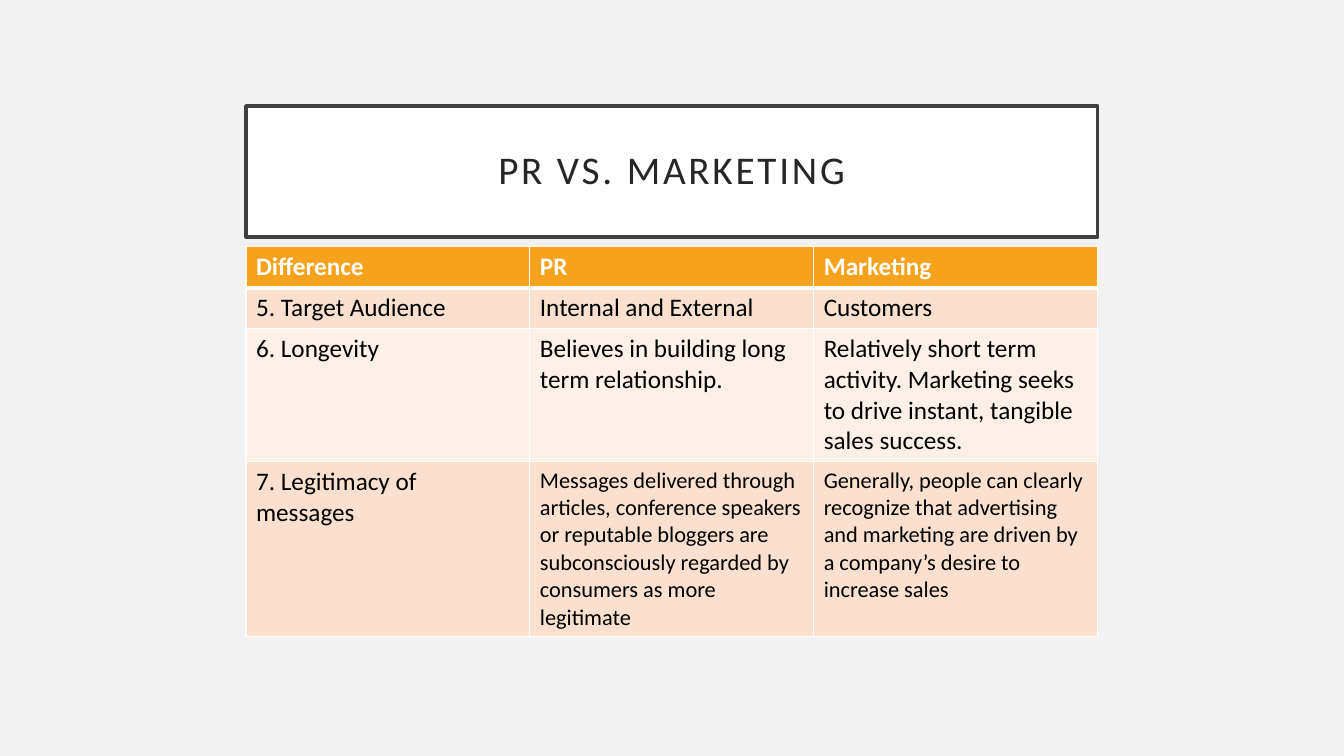
from dataclasses import dataclass

from lxml.etree import SubElement
from pptx import Presentation
from pptx.dml.color import RGBColor
from pptx.enum.shapes import MSO_SHAPE
from pptx.enum.text import MSO_ANCHOR, PP_ALIGN
from pptx.oxml.ns import qn
from pptx.slide import Slide
from pptx.table import _Cell as Cell
from pptx.text.text import Font
from pptx.util import Cm, Pt

COLORS = {
    "page": "F2F2F2", "white": "FFFFFF", "frame": "404040", "title": "262626",
    "head": "F6A21D", "dark": "FBE0CD", "light": "FDF0E8", "text": "000000",
}
LEFT, WIDTH = Cm(6.2), Cm(21.46)


@dataclass
class Row:
    texts: tuple[str, str, str]
    height: float
    fill: str
    sizes: tuple[int, int, int] = (18, 18, 18)
    head: bool = False


ROWS = [
    Row(("Difference", "PR", "Marketing"), 1.03, "head", head=True),
    Row(("5. Target Audience", "Internal and External", "Customers"), 1.03, "dark"),
    Row(("6. Longevity",
         "Believes in building long term relationship.",
         "Relatively short term activity. Marketing seeks to drive instant, "
         "tangible sales success."), 3.3, "light"),
    Row(("7. Legitimacy of messages",
         "Messages delivered through articles, conference speakers or reputable "
         "bloggers are subconsciously regarded by consumers as more legitimate",
         "Generally, people can clearly recognize that advertising and marketing "
         "are driven by a company’s desire to increase sales"),
        4.32, "dark", (18, 16, 16)),
]


def color(name: str) -> RGBColor:
    return RGBColor.from_string(COLORS[name])


def style(font: Font, size: int, tint: str, bold: bool = False) -> None:
    font.name = "Calibri"
    font.size = Pt(size)
    font.bold = bold
    font.color.rgb = color(tint)


def add_title(slide: Slide, text: str) -> None:
    box = slide.shapes.add_shape(MSO_SHAPE.RECTANGLE, LEFT, Cm(2.67), WIDTH, Cm(3.3))
    box.shadow.inherit = False
    box.fill.solid()
    box.fill.fore_color.rgb = color("white")
    box.line.color.rgb = color("frame")
    box.line.width = Pt(2.5)
    frame = box.text_frame
    frame.text = text
    frame.word_wrap = True
    frame.vertical_anchor = MSO_ANCHOR.MIDDLE
    frame.margin_left = frame.margin_right = Cm(0.5)
    frame.margin_top = frame.margin_bottom = Cm(0.5)
    para = frame.paragraphs[0]
    para.alignment = PP_ALIGN.CENTER
    para.line_spacing = 0.9
    font = para.runs[0].font
    style(font, 28, "title")
    para.runs[0]._r.get_or_add_rPr().set("spc", "200")


def add_edges(cell: Cell, top: int, bottom: int) -> None:
    """Draw white borders; top and bottom widths are in points."""
    props = cell._tc.get_or_add_tcPr()
    for side, width in (("L", 1), ("R", 1), ("T", top), ("B", bottom)):
        line = SubElement(props, qn(f"a:ln{side}"), w=str(Pt(width)))
        fill = SubElement(line, qn("a:solidFill"))
        SubElement(fill, qn("a:srgbClr"), val=COLORS["white"])


def add_grid(slide: Slide, rows: list[Row]) -> None:
    count = len(rows[0].texts)
    high = Cm(sum(row.height for row in rows))
    table = slide.shapes.add_table(
        len(rows), count, LEFT, Cm(6.22), WIDTH, high).table
    for col in table.columns:
        col.width = WIDTH // count
    for r, row in enumerate(rows):
        table.rows[r].height = Cm(row.height)
        for c, (text, size) in enumerate(zip(row.texts, row.sizes)):
            cell = table.cell(r, c)
            cell.text_frame.text = text
            run = cell.text_frame.paragraphs[0].runs[0]
            style(run.font, size, "white" if row.head else "text", row.head)
            add_edges(cell, 3 if r == 1 else 1, 3 if row.head else 1)
            cell.fill.solid()
            cell.fill.fore_color.rgb = color(row.fill)


def main() -> None:
    deck = Presentation()
    deck.slide_width, deck.slide_height = Cm(33.87), Cm(19.05)
    slide = deck.slides.add_slide(deck.slide_layouts[6])
    slide.background.fill.solid()
    slide.background.fill.fore_color.rgb = color("page")
    add_title(slide, "PR VS. MARKETING")
    add_grid(slide, ROWS)
    deck.save("out.pptx")


if __name__ == "__main__":
    main()
